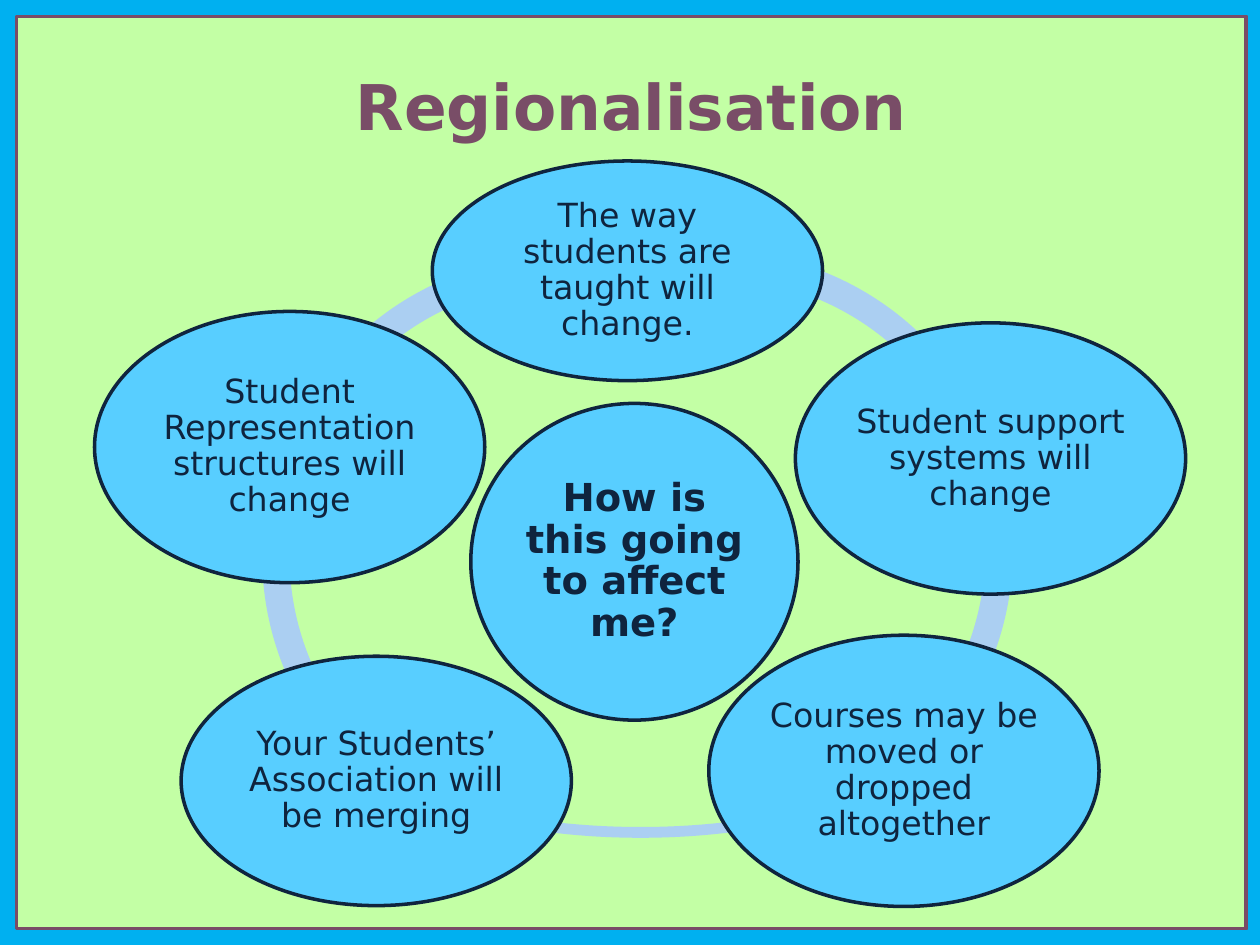
from lxml.etree import SubElement
from pptx import Presentation
from pptx.dml.color import RGBColor
from pptx.enum.shapes import MSO_SHAPE
from pptx.enum.text import MSO_ANCHOR, PP_ALIGN
from pptx.oxml.ns import qn
from pptx.util import Pt

FONT = "DejaVu Sans"
COLORS = {
    "back": "00B0F0", "white": "FFFFFF", "green": "99FF66", "plum": "794D67",
    "ring": "ABCFF2", "node": "58CEFF", "ink": "0F243E",
}
NODE_W = 223
# text, left, top, height
NODES = [
    ("The way students are taught will change.", 193, 0, 125.5),
    ("Student support systems will change", 400.5, 92.5, 155),
    ("Courses may be moved or dropped altogether", 351, 271, 155),
    ("Your Students’ Association will be merging", 49.5, 283, 142.5),
    ("Student Representation structures will change", 0, 86, 155),
]
ARC_W, BAND = 340.5, 0.046
# left, top, height, start and end angle in degrees
ARCS = [
    (96.5, 54.2, ARC_W, 201.44, 283.09),
    (95.8, 55.6, ARC_W, 129.2, 201.86),
    (141.8, 252.2, 134.6, 23.74, 153.92),
    (184.3, 52, ARC_W, 341.67, 49.36),
    (183.6, 51.3, ARC_W, 252.59, 342.02),
]


def color(name):
    return RGBColor.from_string(COLORS[name])


def write(shape, text, size, ink, bold=False, align=PP_ALIGN.CENTER,
          inset=None, spacing=None):
    frame = shape.text_frame
    frame.word_wrap = True
    frame.vertical_anchor = MSO_ANCHOR.MIDDLE
    if inset is not None:
        frame.margin_left = frame.margin_right = Pt(inset)
        frame.margin_top = frame.margin_bottom = Pt(inset)
    para = frame.paragraphs[0]
    para.alignment = align
    para.line_spacing = spacing
    run = para.add_run()
    run.text = text
    run.font.name, run.font.size, run.font.bold = FONT, Pt(size), bold
    run.font.color.rgb = color(ink)


def draw(shapes, kind, box, fill, line=None):
    shape = shapes.add_shape(kind, *map(Pt, box))
    shape.shadow.inherit = False
    shape.fill.solid()
    shape.fill.fore_color.rgb = color(fill)
    if line:
        shape.line.color.rgb = color(line)
        shape.line.width = Pt(2)
    else:
        shape.line.fill.background()
    return shape


def add_frame(slide, box):
    """Lay a translucent green panel over a white one."""
    draw(slide.shapes, MSO_SHAPE.RECTANGLE, box, "white", "plum")
    tint = draw(slide.shapes, MSO_SHAPE.RECTANGLE, box, "green", "plum")
    rgb = tint.element.spPr.find(qn("a:solidFill")).find(qn("a:srgbClr"))
    SubElement(rgb, qn("a:alpha"), val="59000")


def add_title(slide, box):
    title = slide.shapes.title
    title.left, title.top, title.width, title.height = map(Pt, box)
    write(title, "Regionalisation", 36, "plum", bold=True, align=PP_ALIGN.LEFT)
    title.element.getparent().append(title.element)  # in front of the panels


def add_cycle(slide, left, top):
    """Draw the ring of arcs, the hub and the nodes around it."""
    shapes = slide.shapes.add_group_shape().shapes
    for x, y, high, start, end in ARCS:
        arc = draw(shapes, MSO_SHAPE.BLOCK_ARC,
                   (left + x, top + y, ARC_W, high), "ring")
        # an angle unit is 1/60000 degree, an adjustment 1/100000
        for i, value in enumerate((start * 0.6, end * 0.6, BAND)):
            arc.adjustments[i] = value

    def add_node(text, x, y, wide, high, size, bold=False):
        node = draw(shapes, MSO_SHAPE.OVAL,
                    (left + x, top + y, wide, high), "node", "ink")
        write(node, text, size, "ink", bold=bold, inset=2, spacing=0.9)

    add_node("How is this going to affect me?", 215, 138.5, 187, 181, 22, True)
    for text, x, y, high in NODES:
        add_node(text, x, y, NODE_W, high, 19)


def main():
    deck = Presentation()
    deck.slide_width, deck.slide_height = Pt(720), Pt(540)
    slide = deck.slides.add_slide(deck.slide_layouts[5])
    slide.background.fill.solid()
    slide.background.fill.fore_color.rgb = color("back")
    add_frame(slide, (9.4, 9.4, 702.7, 521.3))
    add_title(slide, (196, 15, 476, 90))
    add_cycle(slide, 54, 92)
    deck.save("out.pptx")


if __name__ == "__main__":
    main()
